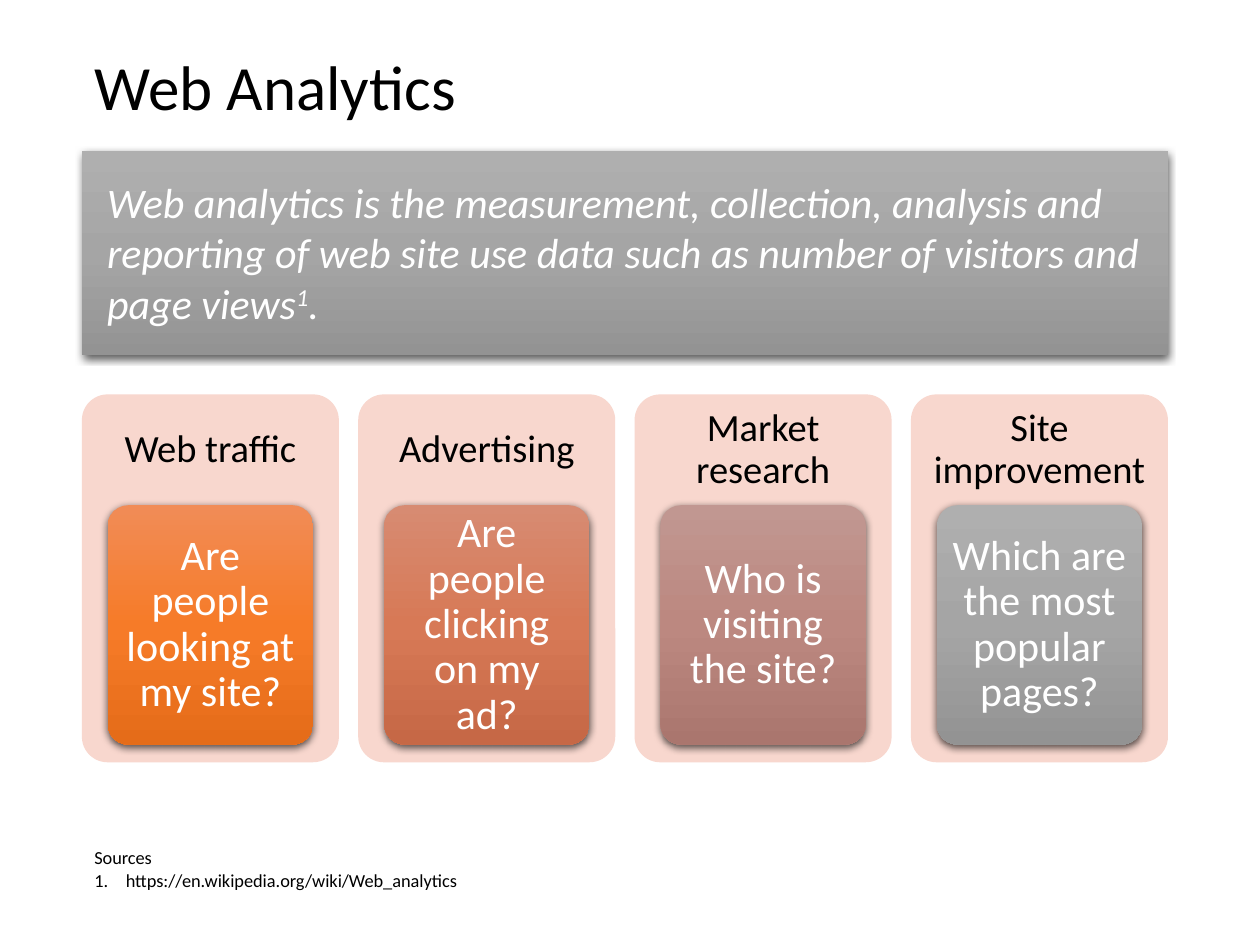
import copy

import pptx
import pptx.dml.color
import pptx.enum.shapes
import pptx.enum.text
import pptx.oxml
import pptx.oxml.ns
import pptx.util
from pptx.util import Inches

HUES = {
    "black": "000000",
    "white": "FFFFFF",
    "pink": "F8D7CE",
    "orange": ("F18C57", "F67B28", "E56C19"),
    "coral": ("D78B72", "D77956", "C66846"),
    "rose": ("C19791", "BC8880", "AA766E"),
    "gray": ("AFAFAF", "A5A5A5", "939393"),
}
CARDS = [
    ("Web traffic", "Are people looking at my site?", "orange"),
    ("Advertising", "Are people clicking on my ad?", "coral"),
    ("Market research", "Who is visiting the site?", "rose"),
    ("Site improvement", "Which are the most popular pages?", "gray"),
]
SHAPES = pptx.enum.shapes.MSO_SHAPE
ANCHOR = pptx.enum.text.MSO_ANCHOR
CENTER = pptx.enum.text.PP_ALIGN.CENTER


def rgb(value):
    """Turn a hex string into a colour."""
    return pptx.dml.color.RGBColor.from_string(value)


def write(para, text, size=24, color="black", italic=False, align=None, line=None, lift=None):
    """Add a formatted run to a paragraph."""
    para.alignment = align
    para.line_spacing = line
    run = para.add_run()
    run.text = text
    font = run.font
    font.name, font.size, font.italic = "Calibri", pptx.util.Pt(size), italic
    font.color.rgb = rgb(HUES[color])
    if lift:
        run._r.get_or_add_rPr().set("baseline", str(lift * 1000))


class Deck:
    """Hold the style and the current slide."""

    def __init__(self):
        """Start a deck with one blank slide."""
        self.file = pptx.Presentation()
        self.file.slide_width, self.file.slide_height = Inches(10), Inches(7.5)
        self.slide = self.file.slides.add_slide(self.file.slide_layouts[6])

    def frame(self, shape, anchor, pad):
        """Set up the text frame of a shape."""
        frame = shape.text_frame
        frame.word_wrap = True
        frame.vertical_anchor = anchor
        frame.margin_left = frame.margin_right = Inches(pad[0])
        frame.margin_top = frame.margin_bottom = Inches(pad[1])
        return frame

    def label(self, box, anchor=ANCHOR.MIDDLE, pad=(0.1, 0.05)):
        """Add a text box and return its frame."""
        shape = self.slide.shapes.add_textbox(*map(Inches, box))
        return self.frame(shape, anchor, pad)

    def panel(self, box, kind=SHAPES.ROUNDED_RECTANGLE):
        """Add a shape with no line and no shadow."""
        shape = self.slide.shapes.add_shape(kind, *map(Inches, box))
        if kind == SHAPES.ROUNDED_RECTANGLE:
            shape.adjustments[0] = 0.1
        shape.line.fill.background()
        shape.shadow.inherit = False
        return shape

    def plain(self, box, color):
        """Add a panel of one colour."""
        shape = self.panel(box)
        shape.fill.solid()
        shape.fill.fore_color.rgb = rgb(HUES[color])

    def glossy(self, box, color, anchor, pad, kind=SHAPES.ROUNDED_RECTANGLE):
        """Add a shaded panel with a soft shadow and return its frame."""
        shape = self.panel(box, kind)
        shape.fill.gradient()
        shape.fill.gradient_angle = 270
        props = shape._element.spPr
        stops = props.find(".//" + pptx.oxml.ns.qn("a:gsLst"))
        stops.insert(1, copy.deepcopy(stops[0]))
        for stop, hue, place in zip(shape.fill.gradient_stops, HUES[color], (0, 0.5, 1)):
            stop.color.rgb = rgb(hue)
            stop.position = place
        props.find(pptx.oxml.ns.qn("a:effectLst")).append(pptx.oxml.parse_xml(
            f'<a:outerShdw {pptx.oxml.ns.nsdecls("a")} blurRad="57150" dist="19050" '
            'dir="5400000" algn="ctr" rotWithShape="0">'
            f'<a:srgbClr val="{HUES["black"]}"><a:alpha val="63000"/></a:srgbClr></a:outerShdw>'))
        return self.frame(shape, anchor, pad)

    def card(self, left, top, title, query, color):
        """Add a titled card with a question inside."""
        wide, inner, head = 2.04, 1.63, 0.88
        self.plain((left, top, wide, 2.92), "pink")
        frame = self.label((left, top, wide, head), pad=(0.09, 0.09))
        write(frame.paragraphs[0], title, size=22, align=CENTER, line=0.9)
        box = (left + (wide - inner) / 2, top + head, inner, 1.9)
        frame = self.glossy(box, color, ANCHOR.MIDDLE, (0.07, 0.05))
        write(frame.paragraphs[0], query, color="white", align=CENTER, line=0.9)

    def number(self, para):
        """Give a paragraph a number and a hanging indent."""
        props = para._p.get_or_add_pPr()
        props.set("marL", str(Inches(0.25)))
        props.set("indent", str(Inches(-0.25)))
        props.append(pptx.oxml.parse_xml(
            f'<a:buAutoNum {pptx.oxml.ns.nsdecls("a")} type="arabicPeriod"/>'))


def main():
    """Build and save the slide."""
    deck = Deck()
    left, wide = 0.65, 8.62
    title = deck.label((left, 0.14, wide, 1.15))
    write(title.paragraphs[0], "Web Analytics", size=36, line=0.9)

    step = (wide - 2.04) / (len(CARDS) - 1)
    for index, card in enumerate(CARDS):
        deck.card(left + index * step, 3.13, *card)

    notes = deck.label((left, 6.67, 9.08, 0.45), anchor=ANCHOR.TOP)
    write(notes.paragraphs[0], "Sources", size=10.5)
    link = notes.add_paragraph()
    deck.number(link)
    write(link, "https://en.wikipedia.org/wiki/Web_analytics", size=10.5)

    frame = deck.glossy((left, 1.2, wide, 1.62), "gray", ANCHOR.TOP, (0.2, 0.2), SHAPES.RECTANGLE)
    style = {"color": "white", "italic": True, "align": pptx.enum.text.PP_ALIGN.LEFT}
    para = frame.paragraphs[0]
    write(para, "Web analytics is the measurement, collection, analysis and reporting of "
          "web site use data such as number of visitors and page views", **style)
    write(para, "1", lift=30, **style)
    write(para, ".", **style)
    deck.file.save("out.pptx")


if __name__ == "__main__":
    main()
